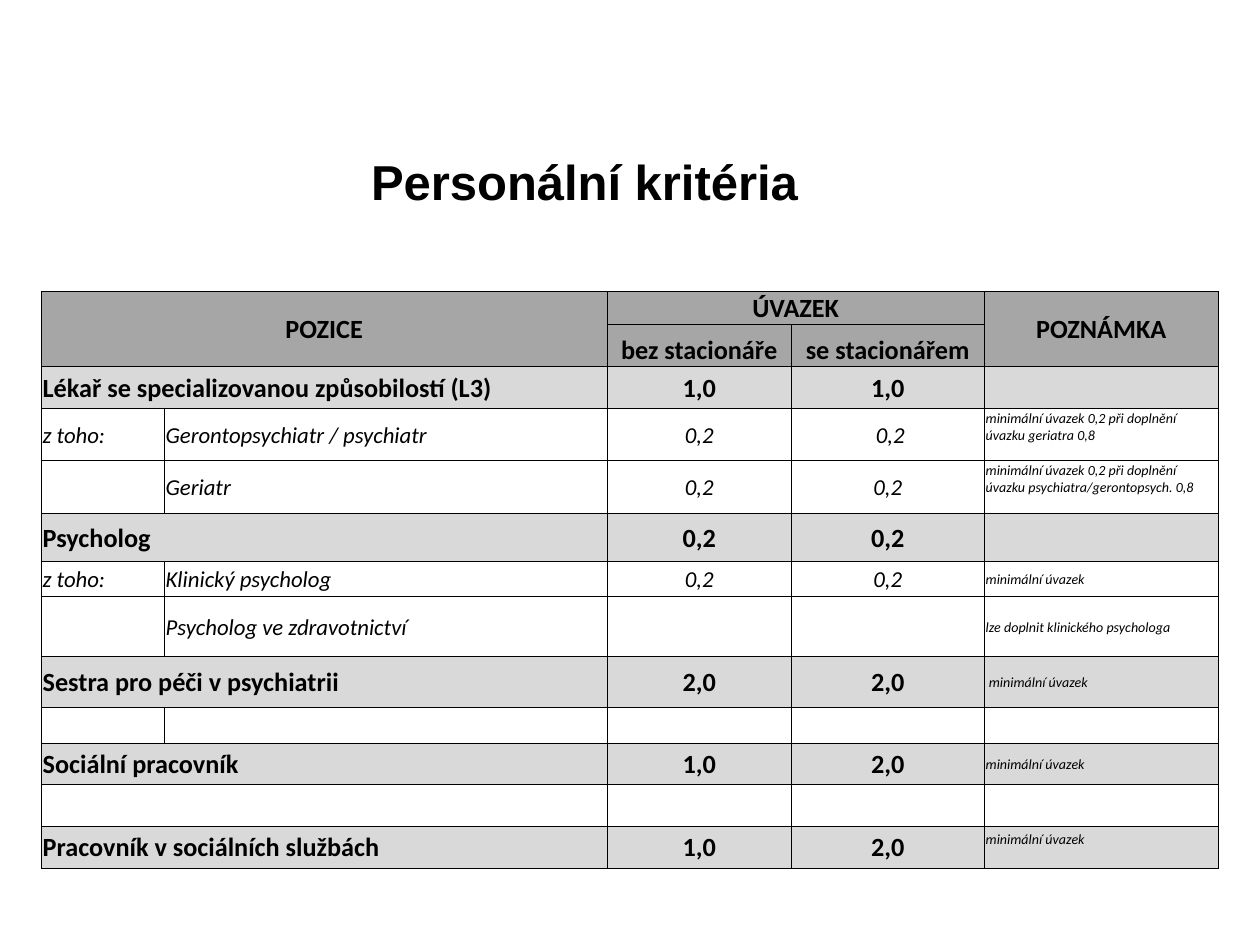
from lxml import etree
from pptx import Presentation
from pptx.dml.color import RGBColor
from pptx.enum.text import MSO_ANCHOR as Anchor, PP_ALIGN as Align
from pptx.oxml import parse_xml
from pptx.oxml.ns import nsdecls, qn
from pptx.util import Cm, Pt

BLACK = RGBColor(0x00, 0x00, 0x00)
HEADER = RGBColor(0xA6, 0xA6, 0xA6)
GROUP = RGBColor(0xD9, 0xD9, 0xD9)

# Content: row kind, height in cm, five cells
TITLE = "Personální kritéria"
ROWS = [
    ("header", 0.66, ["POZICE", "", "ÚVAZEK", "", "POZNÁMKA"]),
    ("header", 0.84, ["", "", "bez stacionáře", "se stacionářem", ""]),
    ("group", 0.84, ["Lékař se specializovanou způsobilostí (L3)", "", "1,0", "1,0", ""]),
    ("detail", 1.06, ["z toho:", "Gerontopsychiatr / psychiatr", "0,2", " 0,2",
                      "minimální úvazek 0,2 při doplnění úvazku geriatra 0,8"]),
    ("detail", 1.06, ["", "Geriatr", "0,2", "0,2",
                      "minimální úvazek 0,2 při doplnění úvazku psychiatra/gerontopsych. 0,8"]),
    ("group", 0.97, ["Psycholog", "", "0,2", "0,2", ""]),
    ("detail", 0.71, ["z toho:", "Klinický psycholog", "0,2", "0,2", "minimální úvazek"]),
    ("detail", 1.21, ["", "Psycholog ve zdravotnictví", "", "",
                      "lze doplnit klinického psychologa"]),
    ("group", 1.03, ["Sestra pro péči v psychiatrii", "", "2,0", "2,0", " minimální úvazek"]),
    ("detail", 0.71, ["", "", "", "", ""]),
    ("group", 0.84, ["Sociální pracovník", "", "1,0", "2,0", "minimální úvazek"]),
    ("detail", 0.84, ["", "", "", "", ""]),
    ("group", 0.84, ["Pracovník v sociálních službách", "", "1,0", "2,0", "minimální úvazek"]),
]
WIDTHS = [2.48, 8.93, 3.71, 3.89, 4.72]
MERGES = [((0, 0), (1, 1)), ((0, 2), (0, 3)), ((0, 4), (1, 4))]
MERGES += [((r, 0), (r, 1)) for r in (2, 5, 8, 10, 11, 12)]
TOP_NOTES = {3: 0.03, 4: 0.03, 12: 0.1}  # row: top inset of a note set high
NOTE = 4

# Formats
FILLS = {"header": HEADER, "group": GROUP, "detail": None}
STRONG = {"size": Pt(15), "bold": True, "italic": False}
FONTS = {
    "header": STRONG,
    "group": STRONG,
    "detail": {"size": Pt(13), "bold": False, "italic": True},
    "note": {"size": Pt(8), "bold": False, "italic": True},
}


def set_font(font, name, values):
    font.name = name
    font.color.rgb = BLACK
    for key, value in values.items():
        setattr(font, key, value)


def add_borders(cell):
    tc_pr = cell._tc.get_or_add_tcPr()
    for i, side in enumerate(("lnL", "lnR", "lnT", "lnB")):
        tc_pr.insert(i, parse_xml(
            f'<a:{side} {nsdecls("a")} w="{Pt(0.5)}"><a:solidFill>'
            f'<a:srgbClr val="{BLACK}"/></a:solidFill></a:{side}>'))


def fill_cell(cell, text, kind, row, col):
    for side in ("left", "right", "top"):
        setattr(cell, f"margin_{side}", Cm(0.03))
    cell.margin_bottom = 0
    low = kind == "header" and col in (2, 3)
    cell.vertical_anchor = Anchor.BOTTOM if low else Anchor.MIDDLE
    if col == NOTE and row in TOP_NOTES:
        cell.vertical_anchor = Anchor.TOP
        cell.margin_top = Cm(TOP_NOTES[row])

    if FILLS[kind] is None:
        cell.fill.background()
    else:
        cell.fill.solid()
        cell.fill.fore_color.rgb = FILLS[kind]
    add_borders(cell)

    p = cell.text_frame.paragraphs[0]
    centred = kind == "header" or col in (2, 3)
    p.alignment = Align.CENTER if centred else Align.LEFT
    if text:
        r = p.add_run()
        r.text = text
        style = "note" if col == NOTE and kind != "header" else kind
        set_font(r.font, "Calibri", FONTS[style])
    else:  # keeps empty cells from stretching short rows
        etree.SubElement(p._p, qn("a:endParaRPr")).set("sz", "800")


def main():
    prs = Presentation()
    prs.slide_width, prs.slide_height = Cm(25.4), Cm(19.05)
    s = prs.slides.add_slide(prs.slide_layouts[5])

    # Title, pushed right of the box centre by its inset
    title = s.shapes.title
    title.left, title.top, title.width, title.height = Cm(1.27), Cm(1.85), Cm(17.83), Cm(3.58)
    tf = title.text_frame
    tf.margin_left = Cm(3.45)
    tf.vertical_anchor = Anchor.MIDDLE
    p = tf.paragraphs[0]
    p.alignment = Align.CENTER
    r = p.add_run()
    r.text = TITLE
    set_font(r.font, "Arial", {"size": Pt(28), "bold": True})

    # Staffing table
    heights = [height for _, height, _ in ROWS]
    table = s.shapes.add_table(len(ROWS), len(WIDTHS), Cm(0.83), Cm(5.87),
                               Cm(sum(WIDTHS)), Cm(sum(heights))).table
    table.first_row = table.horz_banding = False
    for column, width in zip(table.columns, WIDTHS):
        column.width = Cm(width)
    for i, (kind, height, texts) in enumerate(ROWS):
        table.rows[i].height = Cm(height)
        for j, text in enumerate(texts):
            fill_cell(table.cell(i, j), text, kind, i, j)
    for first, last in MERGES:
        table.cell(*first).merge(table.cell(*last))

    prs.save("out.pptx")


if __name__ == "__main__":
    main()
